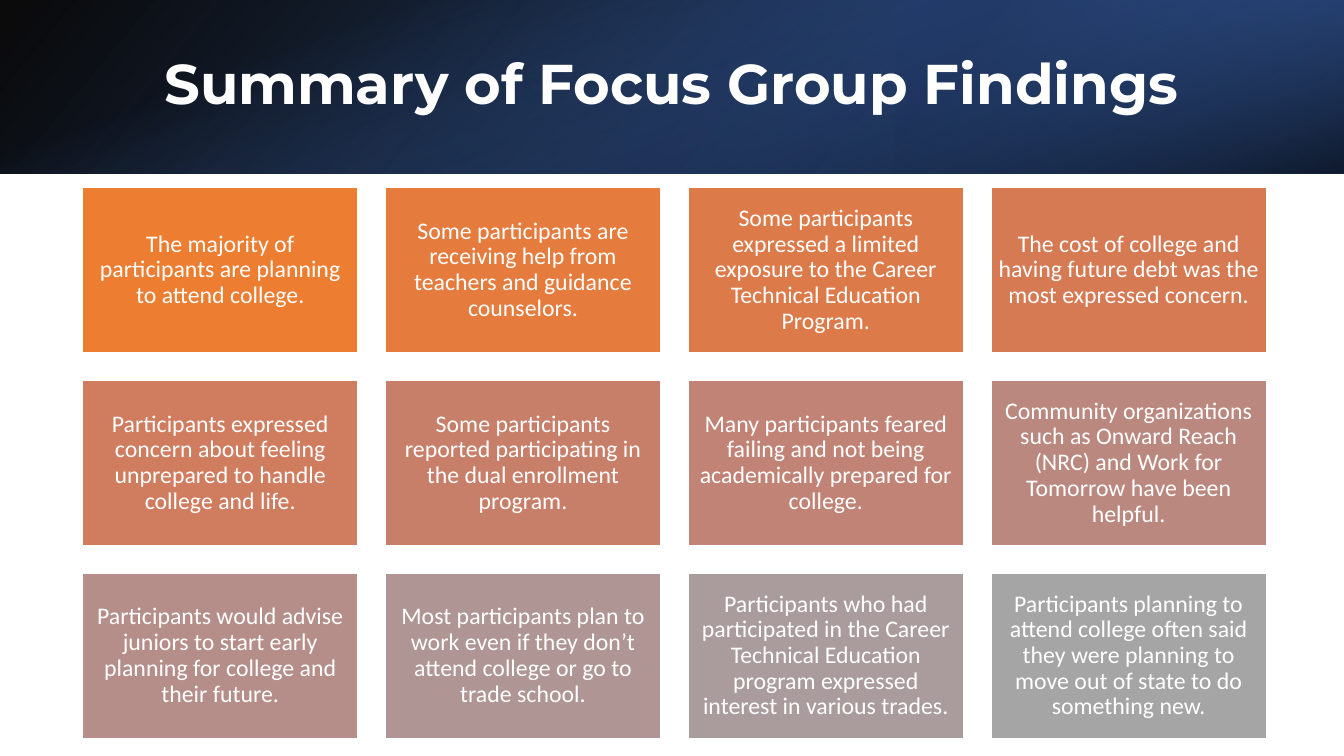
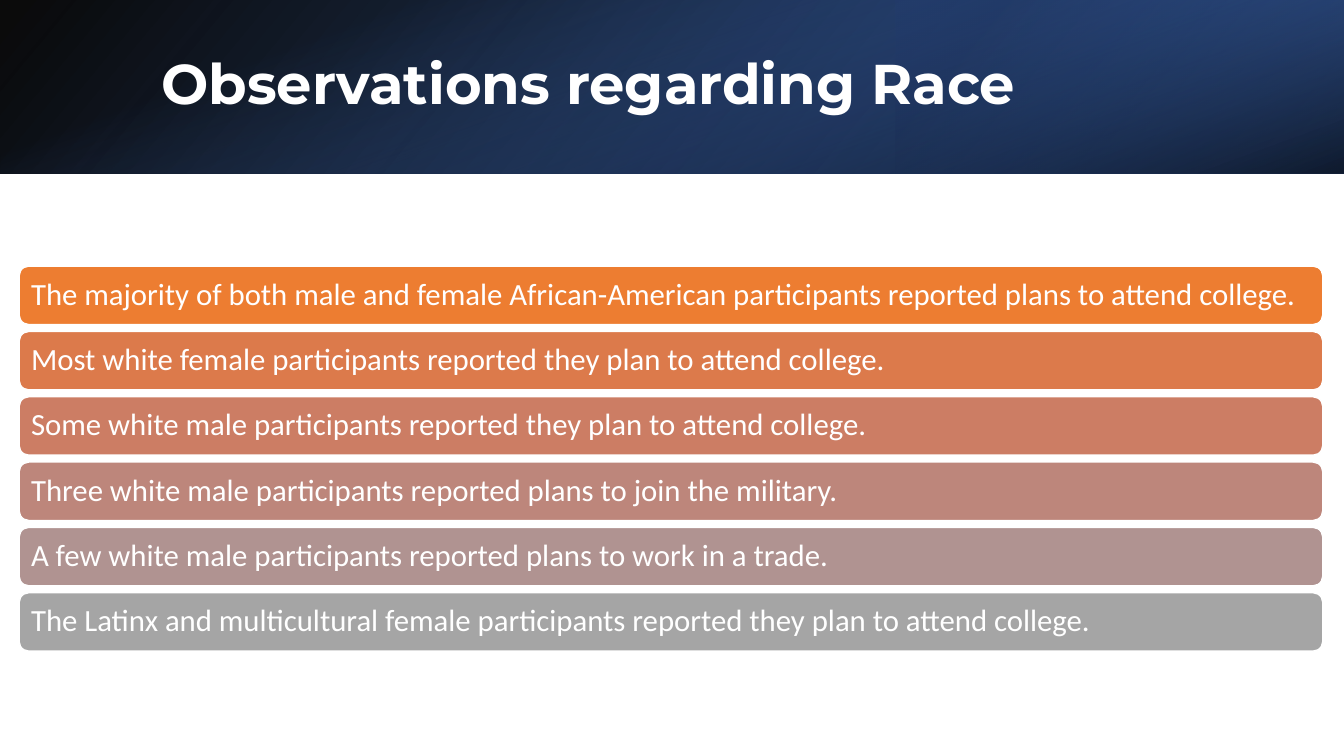
from lxml.etree import SubElement
from pptx import Presentation
from pptx.dml.color import RGBColor
from pptx.enum.shapes import MSO_SHAPE
from pptx.enum.text import MSO_ANCHOR, PP_ALIGN
from pptx.oxml.ns import qn
from pptx.util import Inches, Pt

WHITE = "FFFFFF"
SLIDE_WIDTH = 13.33
SLIDE_HEIGHT = 7.5
BAND_HEIGHT = 1.72
TITLE_FONT = "Montserrat"
BODY_FONT = "Calibri"

FINDINGS = [
    ("The majority of participants are planning to attend college.", "ED7D31"),
    ("Some participants are receiving help from teachers and guidance counselors.", "E57B3D"),
    ("Some participants expressed a limited exposure to the Career Technical Education Program.", "DD7A49"),
    ("The cost of college and having future debt was the most expressed concern.", "D67A54"),
    ("Participants expressed concern about feeling unprepared to handle college and life.", "CF7C5F"),
    ("Some participants reported participating in the dual enrollment program.", "C87F6A"),
    ("Many participants feared failing and not being academically prepared for college.", "C18375"),
    ("Community organizations such as Onward Reach (NRC) and Work for Tomorrow have been helpful.", "BB887F"),
    ("Participants would advise juniors to start early planning for college and their future.", "B58E89"),
    ("Most participants plan to work even if they don’t attend college or go to trade school.", "AF9593"),
    ("Participants who had participated in the Career Technical Education program "
     "expressed interest in various trades.", "AA9C9C"),
    ("Participants planning to attend college often said they were planning to "
     "move out of state to do something new.", "A5A5A5"),
]

OBSERVATIONS = [
    ("The majority of both male and female African-American participants "
     "reported plans to attend college.", "ED7D31"),
    ("Most white female participants reported they plan to attend college.", "DC7A4B"),
    ("Some white male participants reported they plan to attend college.", "CC7D64"),
    ("Three white male participants reported plans to join the military.", "BD867B"),
    ("A few white male participants reported plans to work in a trade.", "B09391"),
    ("The Latinx and multicultural female participants reported they plan to attend college.", "A5A5A5"),
]


def color(value):
    return RGBColor.from_string(value)


def write_text(shape, text, font_name, size, alignment, inset, bold=False):
    text_frame = shape.text_frame
    text_frame.text = text
    text_frame.word_wrap = True
    text_frame.vertical_anchor = MSO_ANCHOR.MIDDLE
    text_frame.margin_left = text_frame.margin_right = Inches(inset)
    text_frame.margin_top = text_frame.margin_bottom = Inches(inset)
    paragraph = text_frame.paragraphs[0]
    paragraph.alignment = alignment
    paragraph.line_spacing = 0.9
    font = paragraph.runs[0].font
    font.name = font_name
    font.size = Pt(size)
    font.bold = bold
    font.color.rgb = color(WHITE)


def add_plain_shape(slide, kind, left, top, width, height):
    shape = slide.shapes.add_shape(
        kind, Inches(left), Inches(top), Inches(width), Inches(height))
    shape.shadow.inherit = False
    return shape


def add_gradient(slide, left, top, width, height, stops, angle, rotation=0, flipped=False):
    shape = add_plain_shape(slide, MSO_SHAPE.RECTANGLE, left, top, width, height)
    shape.rotation = rotation
    shape.line.fill.background()
    if flipped:
        shape._element.spPr.get_or_add_xfrm().set("flipH", "1")
    shape.fill.gradient()
    shape.fill.gradient_angle = 360 - angle
    for stop, (position, value, opacity) in zip(shape.fill.gradient_stops, stops):
        stop.position = position
        stop.color.rgb = color(value)
        color_element = stop._gs.find(qn("a:srgbClr"))
        SubElement(color_element, qn("a:alpha"), val=str(opacity * 1000))


def add_title_band(slide):
    add_gradient(slide, 0, 0, SLIDE_WIDTH, BAND_HEIGHT,
                 [(0, "000000", 96), (1, "2F5597", 100)], 140, flipped=True)
    add_gradient(slide, SLIDE_WIDTH * 2 / 3, 0, SLIDE_WIDTH / 3, BAND_HEIGHT,
                 [(0.19, "203864", 68), (1, "4472C4", 79)], 320, 180, True)
    add_gradient(slide, (SLIDE_WIDTH - BAND_HEIGHT) / 2, (BAND_HEIGHT - SLIDE_WIDTH) / 2,
                 BAND_HEIGHT, SLIDE_WIDTH,
                 [(0.23, "4472C4", 0), (0.99, "000000", 74)], 340, 90)


def add_titled_slide(presentation, title, left, alignment):
    slide = presentation.slides.add_slide(presentation.slide_layouts[6])
    add_title_band(slide)
    text_box = slide.shapes.add_textbox(Inches(left), Inches(0.38), Inches(10.98), Inches(0.96))
    write_text(text_box, title, TITLE_FONT, 40, alignment, 0.1, bold=True)
    return slide


def add_card(slide, kind, left, top, width, height, fill):
    card = add_plain_shape(slide, kind, left, top, width, height)
    card.fill.solid()
    card.fill.fore_color.rgb = color(fill)
    card.line.color.rgb = color(WHITE)
    card.line.width = Pt(1)
    return card


def add_card_grid(slide, items):
    columns, width, height = 4, 2.73, 1.64
    gap = width / 10
    for index, (text, fill) in enumerate(items):
        row, column = divmod(index, columns)
        card = add_card(slide, MSO_SHAPE.RECTANGLE, 0.82 + column * (width + gap),
                        1.86 + row * (height + gap), width, height, fill)
        write_text(card, text, BODY_FONT, 17, PP_ALIGN.CENTER, 0.07)


def add_bar_list(slide, items):
    first_top, last_top = 2.64, 5.88
    pitch = (last_top - first_top) / (len(items) - 1)
    for index, (text, fill) in enumerate(items):
        bar = add_card(slide, MSO_SHAPE.ROUNDED_RECTANGLE, 0.19, first_top + index * pitch,
                       12.93, 0.58, fill)
        write_text(bar, text, BODY_FONT, 22, PP_ALIGN.LEFT, 0.09)


def main():
    presentation = Presentation()
    presentation.slide_width = Inches(SLIDE_WIDTH)
    presentation.slide_height = Inches(SLIDE_HEIGHT)
    findings_slide = add_titled_slide(
        presentation, "Summary of Focus Group Findings", 1.17, PP_ALIGN.CENTER)
    add_card_grid(findings_slide, FINDINGS)
    observations_slide = add_titled_slide(
        presentation, "Observations regarding Race", 1.5, PP_ALIGN.LEFT)
    add_bar_list(observations_slide, OBSERVATIONS)
    presentation.save("out.pptx")


if __name__ == "__main__":
    main()
